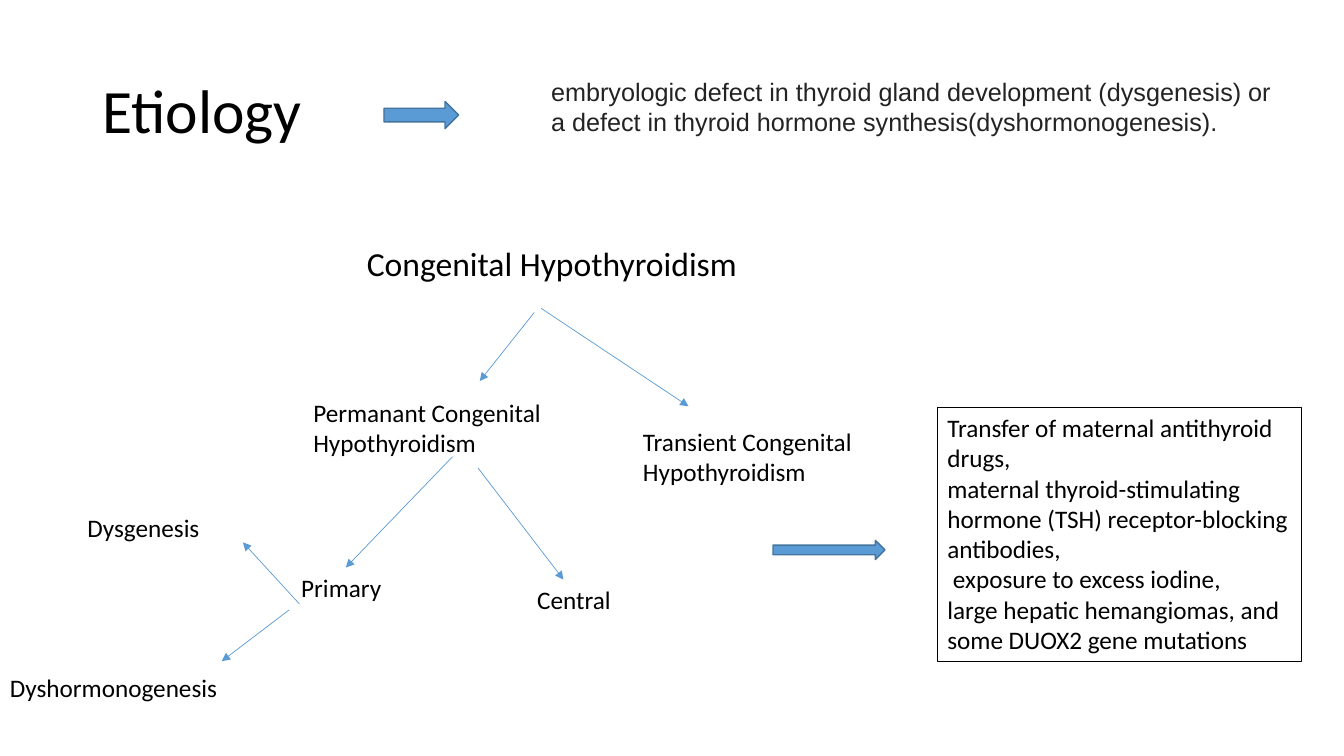
from dataclasses import dataclass

from pptx import Presentation
from pptx import util as u
from pptx.dml.color import RGBColor
from pptx.enum import shapes, text
from pptx.oxml.ns import qn
from lxml import etree


@dataclass(frozen=True)
class Theme:
    font: str = "Calibri"
    definition_font: str = "Arial"
    ink: str = "000000"
    definition_ink: str = "232323"
    accent: str = "5B9BD5"
    accent_edge: str = "43739E"
    title: float = 44
    heading: float = 24
    body: float = 18
    hairline: float = 0.5
    frame: float = 0.75
    edge: float = 1


THEME = Theme()


@dataclass(frozen=True)
class Box:
    x: float
    y: float
    w: float
    h: float

    def inner(self, x, y, w, h):
        return Box(self.x + x, self.y + y, w, h)

    def emu(self):
        return [u.Pt(v) for v in (self.x, self.y, self.w, self.h)]


def rgb(value):
    return RGBColor.from_string(value)


# Shared parts

def write(sp, lines, size=THEME.body, font=THEME.font, color=THEME.ink,
          anchor=text.MSO_ANCHOR.TOP, spacing=1.0):
    tf = sp.text_frame
    tf.word_wrap = True
    tf.vertical_anchor = anchor
    for i, line in enumerate(lines):
        p = tf.add_paragraph() if i else tf.paragraphs[0]
        p.text = line
        p.alignment = text.PP_ALIGN.LEFT
        p.line_spacing = spacing
        p.font.size = u.Pt(size)
        p.font.name = font
        p.font.color.rgb = rgb(color)


def add_label(s, box, *lines, **style):
    write(s.shapes.add_textbox(*box.emu()), lines, **style)


def add_block_arrow(s, box):
    sp = s.shapes.add_shape(shapes.MSO_SHAPE.RIGHT_ARROW, *box.emu())
    sp.shadow.inherit = False
    sp.fill.solid()
    sp.fill.fore_color.rgb = rgb(THEME.accent)
    sp.line.color.rgb = rgb(THEME.accent_edge)
    sp.line.width = u.Pt(THEME.edge)


def add_branch(s, box, x1, y1, x2, y2):
    ends = (box.x + x1, box.y + y1, box.x + x2, box.y + y2)
    line = s.shapes.add_connector(shapes.MSO_CONNECTOR.STRAIGHT,
                                  *[u.Pt(v) for v in ends])
    line.line.color.rgb = rgb(THEME.accent)
    line.line.width = u.Pt(THEME.hairline)
    etree.SubElement(line.line._get_or_add_ln(), qn("a:tailEnd"), type="triangle")
    etree.SubElement(line._element.spPr, qn("a:effectLst"))


# Title with its definition
def add_header(s, box):
    add_label(s, box.inner(0, 0, 828, box.h), "Etiology", size=THEME.title,
              anchor=text.MSO_ANCHOR.MIDDLE, spacing=0.9)
    add_block_arrow(s, box.inner(208.3, 43.7, 53.3, 19.4))
    add_label(s, box.inner(320.5, 22.2, 547, 51),
              "embryologic defect in thyroid gland development (dysgenesis) or",
              "a defect in thyroid hormone synthesis(dyshormonogenesis).",
              font=THEME.definition_font, color=THEME.definition_ink)


# Classification tree
def add_tree(s, box):
    add_label(s, box.inner(254.9, 0, 431.3, 36), "Congenital Hypothyroidism",
              size=THEME.heading)
    nodes = [
        ("Permanant Congenital Hypothyroidism", 216.7, 110.1, 270.7, 51),
        ("Transient Congenital Hypothyroidism", 452.2, 131, 270.7, 51),
        ("Primary", 208.1, 235.4, 115.2, 29),
        ("Central", 376.6, 244, 115.2, 29),
        ("Dysgenesis", 55.4, 192.2, 135.4, 29),
        ("Dyshormonogenesis", 0, 306.6, 166.3, 29),
    ]
    for name, *place in nodes:
        add_label(s, box.inner(*place), name)

    branches = [
        (381.6, 53.2, 342.7, 102.2),   # root to permanent
        (386.6, 50.3, 491.8, 120.2),   # root to transient
        (323.3, 156.2, 247, 235.4),    # permanent to primary
        (341.3, 164.1, 402.5, 244),    # permanent to central
        (213.8, 261.3, 173.5, 217.4),  # primary to dysgenesis
        (206.6, 265.6, 158.4, 302.3),  # primary to dyshormonogenesis
    ]
    for ends in branches:
        add_branch(s, box, *ends)


# Framed causes of the transient form
def add_causes(s, box):
    add_block_arrow(s, box.inner(0, 95, 80, 13.7))
    frame_left = 117.4
    frame = box.inner(frame_left, 0, box.w - frame_left, box.h)
    sp = s.shapes.add_shape(shapes.MSO_SHAPE.RECTANGLE, *frame.emu())
    sp.shadow.inherit = False
    sp.fill.background()
    sp.line.color.rgb = rgb(THEME.ink)
    sp.line.width = u.Pt(THEME.frame)
    write(sp, [
        "Transfer of maternal antithyroid drugs,",
        "maternal thyroid-stimulating hormone (TSH) receptor-blocking antibodies,",
        " exposure to excess iodine,",
        "large hepatic hemangiomas, and some DUOX2 gene mutations",
    ])


def main():
    prs = Presentation()
    prs.slide_width, prs.slide_height = u.Pt(960), u.Pt(540)
    s = prs.slides.add_slide(prs.slide_layouts[6])
    add_header(s, Box(66, 28.8, 867.5, 104.4))
    add_tree(s, Box(0, 170, 723, 336))
    add_causes(s, Box(552.2, 291, 377.4, 181.5))
    prs.save("out.pptx")


if __name__ == "__main__":
    main()
